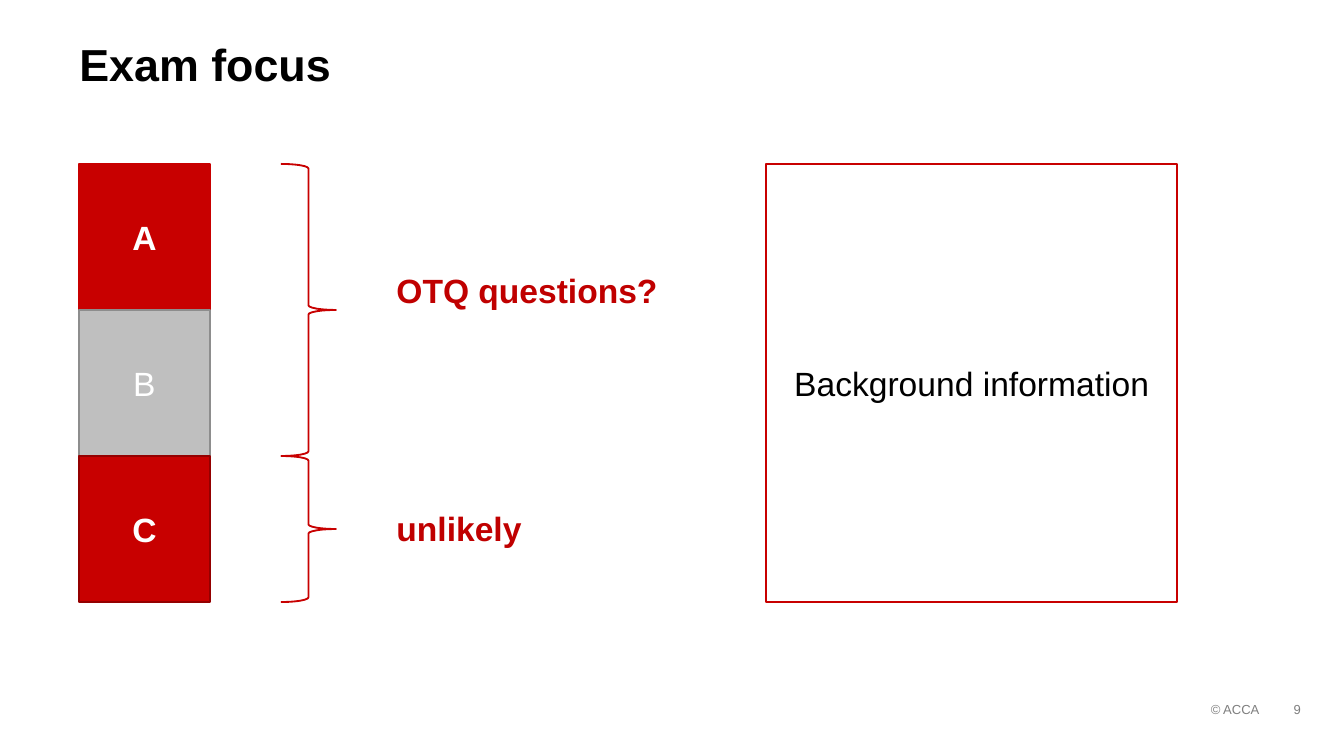
from pptx import Presentation
from pptx.dml.color import RGBColor
from pptx.enum.shapes import MSO_SHAPE
from pptx.enum.text import MSO_ANCHOR, PP_ALIGN
from pptx.util import Inches, Pt

RECT, BRACE = MSO_SHAPE.RECTANGLE, MSO_SHAPE.RIGHT_BRACE
LEFT, MID, RIGHT = PP_ALIGN.LEFT, PP_ALIGN.CENTER, PP_ALIGN.RIGHT
RED, GREY, WHITE, BLACK = "C80000", "BFBFBF", "FFFFFF", "000000"

deck = Presentation()
deck.slide_width = Inches(10)
deck.slide_height = deck.slide_width * 9 // 16
slide = deck.slides.add_slide(deck.slide_layouts[6])

# Three equal rows share the height between top and base
edge, top, base = 0.59, 1.22, 4.48
row = (base - top) / 3


def write(frame, text, size, color, bold=False, align=LEFT):
    frame.word_wrap = True
    par = frame.paragraphs[0]
    par.text, par.alignment = text, align
    font = par.font
    font.name, font.size, font.bold = "Arial", Pt(size), bold
    font.color.rgb = RGBColor.from_string(color)
    return par


def draw(kind, x, start, wide, rows, line, fill=None):
    """Add an outlined shape that begins at a row and spans some rows."""
    shape = slide.shapes.add_shape(
        kind, Inches(x), Inches(top + start * row), Inches(wide), Inches(rows * row))
    shape.shadow.inherit = False
    shape.line.color.rgb = RGBColor.from_string(line)
    shape.line.width = Pt(1)
    if fill:
        shape.fill.solid()
        shape.fill.fore_color.rgb = RGBColor.from_string(fill)
    else:
        shape.fill.background()
    return shape


# Plain text: title, brace labels, footer
for text, x, y, wide, high, pad, size, color, bold, align in (
    ("Exam focus", edge, 0.32, 8.58, 0.39, 0, 24, BLACK, True, LEFT),
    ("OTQ questions?", 2.95, 1.96, 2.05, 0.4, 0.05, 18, "C00000", True, LEFT),
    ("unlikely", 2.95, 3.73, 2.05, 0.4, 0.05, 18, "C00000", True, LEFT),
    ("© ACCA", 7.13, 5.22, 2.24, 0.12, 0, 7, "7F7F7F", False, RIGHT),
    ("9", 9.45, 5.22, 0.23, 0.13, 0, 7, "7F7F7F", False, RIGHT),
):
    box = slide.shapes.add_textbox(Inches(x), Inches(y), Inches(wide), Inches(high))
    frame = box.text_frame
    frame.margin_left = frame.margin_right = 0
    frame.margin_top = frame.margin_bottom = Inches(pad)
    par = write(frame, text, size, color, bold, align)
    if text == "Exam focus":
        par.line_spacing = 0.9

# Exam sections and the background panel
for text, x, start, wide, rows, line, fill, color, bold in (
    ("A", edge, 0, 0.97, 1, RED, RED, WHITE, True),
    ("B", edge, 1, 0.97, 1, "8D8D8D", GREY, WHITE, False),
    ("C", edge, 2, 0.97, 1, "940000", RED, WHITE, True),
    ("Background information", 5.7, 0, 3.06, 3, RED, WHITE, BLACK, False),
):
    frame = draw(RECT, x, start, wide, rows, line, fill).text_frame
    frame.vertical_anchor = MSO_ANCHOR.MIDDLE
    write(frame, text, 18, color, bold, MID)

for start, rows in ((0, 2), (2, 1)):
    draw(BRACE, 2.09, start, 0.41, rows, RED)

deck.save("out.pptx")
